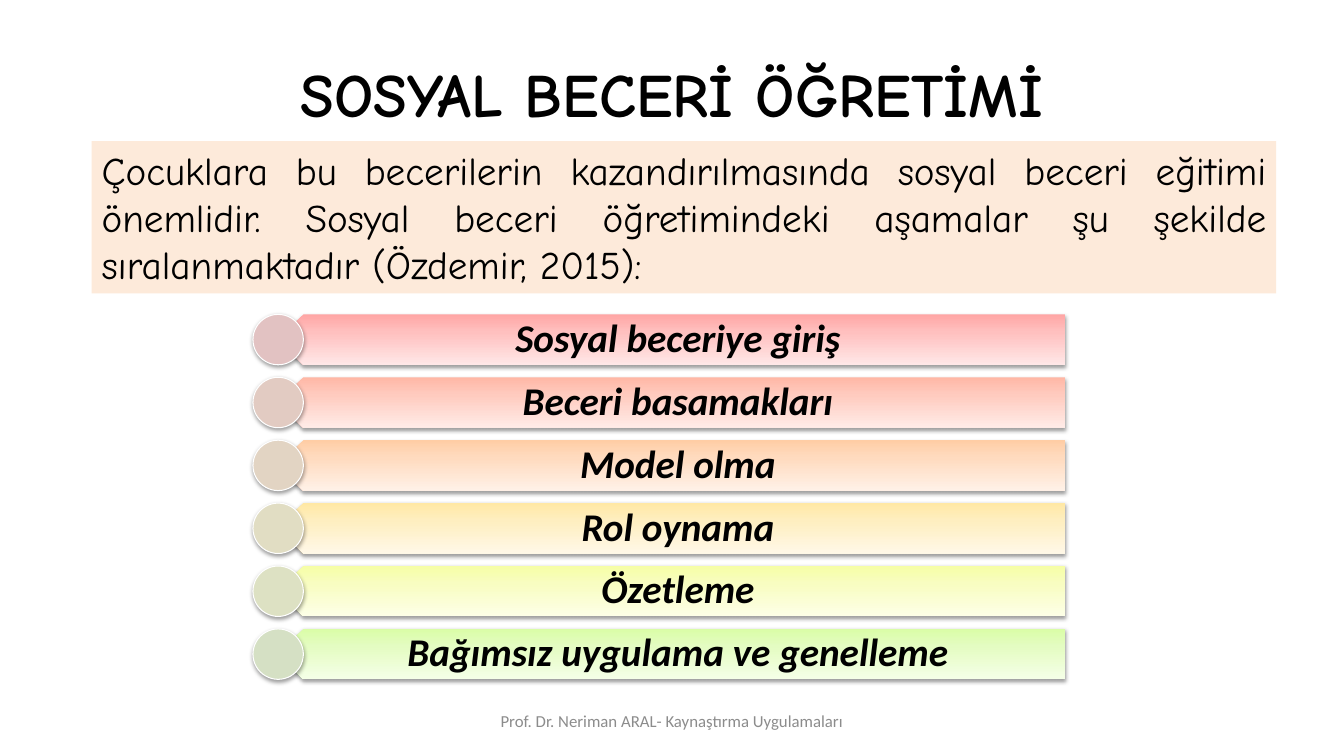
"""Build the slide on the steps of teaching social skills."""
from dataclasses import dataclass

from lxml.etree import SubElement
from pptx import Presentation
from pptx.dml.color import RGBColor
from pptx.enum.shapes import MSO_SHAPE as Shape
from pptx.enum.text import MSO_ANCHOR as Anchor, MSO_AUTO_SIZE as AutoSize, PP_ALIGN as Align
from pptx.oxml.ns import qn
from pptx.util import Pt


@dataclass(frozen=True)
class Theme:
    """Fonts, type sizes and colours of the slide."""
    display: str = "Comic Neue"
    text: str = "Calibri"
    title_size: int = 44
    body_size: int = 28
    footer_size: int = 12
    black: str = "000000"
    grey: str = "8C8C8C"
    white: str = "FFFFFF"
    panel: str = "FDEADA"


THEME = Theme()
STEPS = [
    ("Sosyal beceriye giriş", "E2C2C2", ("FFA6A5", "FFC0BF", "FFE7E7")),
    ("Beceri basamakları", "E2CBC2", ("FFB7A5", "FFCBBF", "FFEBE7")),
    ("Model olma", "E2D4C3", ("FFCDA5", "FFDBBF", "FFF1E7")),
    ("Rol oynama", "E1DDC3", ("FFE8A5", "FEEEC0", "FFF8E7")),
    ("Özetleme", "DDE1C3", ("F6FEA6", "F8FDC1", "FDFFE7")),
    ("Bağımsız uygulama ve genelleme", "D5E0C4", ("DAFDA7", "E4FCC2", "F5FFE7")),
]
STOPS = (0, 35, 100)
BAR_LEFT, BAR_WIDTH, BAR_HEIGHT = 198.7, 562.3, 36
LABEL_INDENT = 8.7
STEPS_TOP, STEP_PITCH = 224.6, 44.93


def write(box, text, font, size, color, align, bold=None, italic=None):
    """Put one formatted run in a text holder and return its paragraph."""
    box.text_frame.word_wrap = True
    para = box.text_frame.paragraphs[0]
    para.alignment = align
    span = para.add_run()
    span.text = text
    span.font.name, span.font.size = font, Pt(size)
    span.font.bold, span.font.italic = bold, italic
    span.font.color.rgb = RGBColor.from_string(color)
    return para


def add_text_box(page, left, top, width, height):
    """Add an empty text box with its text anchored in the middle."""
    box = page.shapes.add_textbox(Pt(left), Pt(top), Pt(width), Pt(height))
    box.text_frame.vertical_anchor = Anchor.MIDDLE
    return box


def add_filled(page, kind, left, top, width, height, color=None):
    """Add a preset shape without outline or shadow, in a solid colour if given."""
    shape = page.shapes.add_shape(kind, Pt(left), Pt(top), Pt(width), Pt(height))
    shape.shadow.inherit = False
    shape.line.fill.background()
    if color:
        shape.fill.solid()
        shape.fill.fore_color.rgb = RGBColor.from_string(color)
    return shape


def add_color(parent, color):
    """Append an RGB colour element and return it."""
    return SubElement(parent, qn("a:srgbClr"), val=color)


def set_shadow(shape):
    """Give a shape a soft shadow straight below it."""
    effects = shape._element.spPr.find(qn("a:effectLst"))
    shadow = SubElement(effects, qn("a:outerShdw"), blurRad=str(Pt(3.1)),
                        dist=str(Pt(1.6)), dir="5400000", rotWithShape="0")
    SubElement(add_color(shadow, THEME.black), qn("a:alpha"), val="38000")


def set_gradient(shape, colors):
    """Fill a shape with a vertical gradient through the given colours."""
    shape.fill.gradient()
    shape.fill.gradient_angle = 90
    stops = shape._element.spPr.find(qn("a:gradFill")).find(qn("a:gsLst"))
    for stop in list(stops):
        stops.remove(stop)
    for percent, color in zip(STOPS, colors):
        add_color(SubElement(stops, qn("a:gs"), pos=str(percent * 1000)), color)


def add_title(page, text):
    """Place and write the title."""
    title = page.shapes.title
    title.left, title.top, title.width, title.height = Pt(48), Pt(21.6), Pt(864), Pt(90)
    title.text_frame.vertical_anchor = Anchor.MIDDLE
    write(title, text, THEME.display, THEME.title_size, THEME.black, Align.CENTER, bold=True)


def add_step(page, top, label, dot_color, bar_colors):
    """Add one step: a bar pointing left, its label and its dot."""
    bar = add_filled(page, Shape.PENTAGON, BAR_LEFT, top, BAR_WIDTH, BAR_HEIGHT)
    bar.rotation = 180
    set_gradient(bar, bar_colors)
    set_shadow(bar)

    box = add_text_box(page, BAR_LEFT + LABEL_INDENT, top, BAR_WIDTH - LABEL_INDENT, BAR_HEIGHT)
    frame = box.text_frame
    frame.margin_left = frame.margin_right = Pt(15.8)
    frame.margin_top = frame.margin_bottom = Pt(8.6)
    para = write(box, label, THEME.text, THEME.body_size, THEME.black, Align.CENTER,
                 bold=True, italic=True)
    para.line_spacing = 0.9

    dot = add_filled(page, Shape.OVAL, BAR_LEFT - BAR_HEIGHT / 2, top,
                     BAR_HEIGHT, BAR_HEIGHT, dot_color)
    dot.line.color.rgb = RGBColor.from_string(THEME.white)
    dot.line.width = Pt(0.75)
    set_shadow(dot)


def add_panel(page, text):
    """Add the tinted introduction paragraph."""
    panel = add_filled(page, Shape.RECTANGLE, 65.5, 100.8, 846, 108.7, THEME.panel)
    panel.text_frame.vertical_anchor = Anchor.TOP
    para = write(panel, text, THEME.display, THEME.body_size, THEME.black, Align.JUSTIFY)
    para.space_after = Pt(10)
    panel.text_frame.auto_size = AutoSize.SHAPE_TO_FIT_TEXT


def main():
    """Build and save the deck."""
    deck = Presentation()
    deck.slide_width, deck.slide_height = Pt(960), Pt(540)
    page = deck.slides.add_slide(deck.slide_layouts[5])
    add_title(page, "SOSYAL BECERİ ÖĞRETİMİ")
    footer = add_text_box(page, 328, 500.5, 304, 28.75)
    write(footer, "Prof. Dr. Neriman ARAL- Kaynaştırma Uygulamaları",
          THEME.text, THEME.footer_size, THEME.grey, Align.CENTER)
    for index, step in enumerate(STEPS):
        add_step(page, STEPS_TOP + index * STEP_PITCH, *step)
    add_panel(page, "Çocuklara bu becerilerin kazandırılmasında sosyal beceri eğitimi "
                    "önemlidir. Sosyal beceri öğretimindeki aşamalar şu şekilde "
                    "sıralanmaktadır (Özdemir, 2015):")
    deck.save("out.pptx")


if __name__ == "__main__":
    main()
